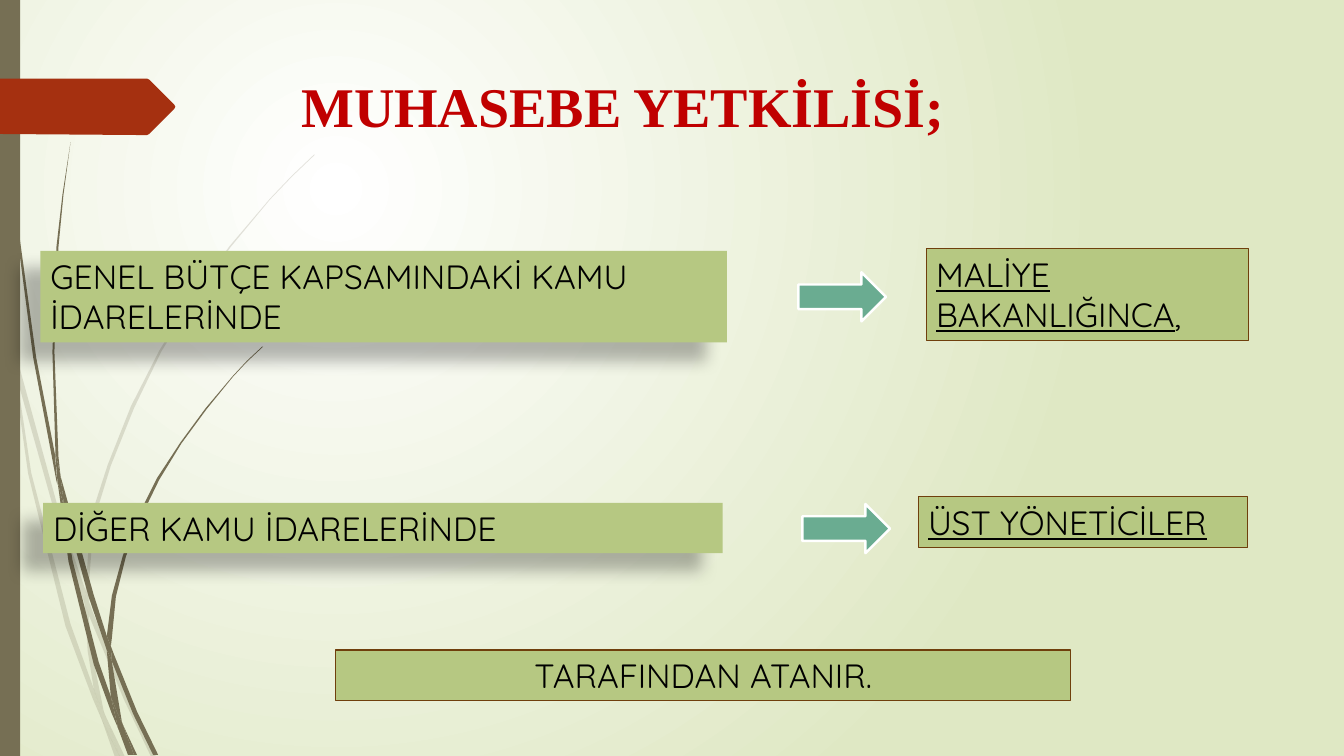
from lxml import etree
from pptx import Presentation
from pptx.dml.color import RGBColor
from pptx.enum.shapes import MSO_SHAPE as SHAPE
from pptx.enum.text import MSO_ANCHOR as ANCHOR, MSO_AUTO_SIZE as AUTO, PP_ALIGN as ALIGN
from pptx.oxml.ns import qn
from pptx.util import Cm, Pt

BROWN, RUST, GREEN, EDGE = "766F54", "A53010", "B6C882", "6F3F0C"
BODY_FONT = "Quicksand"
OUTLINE_UNIT = Cm(2.54) / 100  # outline points are in hundredths of an inch

# Pieces of the grass blades, each a closed outline
PALE_BLADES = [
    [(11, 350), (9, 322), (0, 282), (0, 299), (10, 344)],
    [(58, 522), (84, 599), (85, 586), (62, 520), (14, 345), (17, 376)],
    [(92, 607), (88, 596), (88, 610), (123, 694), (150, 751), (155, 751), (127, 692)],
    [(119, 751), (124, 751), (105, 711)],
    [(93, 683), (70, 619), (31, 469), (17, 376), (11, 350), (28, 470), (65, 621),
     (92, 693), (101, 714), (99, 707)],
    [(84, 599), (87, 646), (93, 683), (96, 692), (105, 711), (103, 706), (91, 646),
     (88, 610), (88, 608)],
    [(88, 584), (91, 543), (98, 501), (110, 462), (133, 405), (160, 349), (193, 295), (229, 245),
     (268, 198), (290, 175), (312, 154), (312, 153), (289, 175), (268, 197), (228, 244),
     (191, 294), (158, 348), (130, 403), (107, 461), (94, 501), (88, 542), (85, 584),
     (85, 586), (88, 596)],
    [(101, 714), (114, 751), (119, 751)],
    [(88, 608), (88, 610), (88, 596), (85, 586), (84, 599)],
    [(96, 692), (93, 683), (99, 707), (101, 714), (119, 751), (105, 711)],
]
DARK_BLADES = [
    [(7, 110), (17, 233), (33, 355), (56, 477), (57, 481), (55, 457), (55, 453), (36, 355),
     (19, 232), (8, 109), (5, 48), (4, 0), (3, 0), (4, 48)],
    [(88, 592), (106, 645), (106, 633), (106, 631), (93, 590), (60, 472), (64, 505)],
    [(113, 649), (110, 641), (111, 656), (132, 708), (152, 749), (157, 749), (136, 706)],
    [(110, 691), (98, 657), (72, 556), (64, 505), (57, 477), (68, 557), (93, 659),
     (111, 708), (117, 722), (116, 717)],
    [(60, 472), (58, 453), (54, 349), (58, 245), (63, 193), (70, 141), (62, 193),
     (56, 245), (52, 349), (55, 449)],
    [(133, 749), (136, 749), (122, 719)],
    [(57, 477), (64, 505), (60, 472), (55, 449), (55, 453)],
    [(111, 633), (115, 592), (125, 552), (140, 513), (158, 476), (180, 440), (205, 406), (231, 374),
     (245, 359), (261, 344), (260, 344), (245, 358), (231, 373), (204, 405), (179, 439),
     (156, 474), (137, 512), (122, 551), (111, 591), (106, 631), (110, 641)],
    [(117, 722), (127, 749), (131, 749)],
    [(106, 645), (110, 691), (116, 706), (122, 719), (121, 716), (111, 656), (109, 651)],
    [(106, 645), (109, 651), (111, 656), (110, 641), (106, 631), (106, 633)],
    [(116, 706), (110, 691), (116, 717), (117, 722), (130, 749), (133, 749), (122, 719)],
]
TITLE_TAG = [(173, 108), (148, 133), (146, 134), (136, 134), (0, 133), (0, 78),
             (146, 78), (148, 79), (173, 104), (174, 106)]


def color(hex_code):
    return RGBColor.from_string(hex_code)


def add_xml(parent, tag, **attrs):
    return etree.SubElement(parent, qn(tag), {k: str(v) for k, v in attrs.items()})


def paint(sp, fill, line=None, width=0.75):
    sp.shadow.inherit = False
    sp.fill.solid()
    sp.fill.fore_color.rgb = color(fill)
    if line:
        sp.line.color.rgb = color(line)
        sp.line.width = Pt(width)
    else:
        sp.line.fill.background()


def set_alpha(sp, percent):
    clr = sp._element.spPr.find(qn("a:solidFill")).find(qn("a:srgbClr"))
    add_xml(clr, "a:alpha", val=percent * 1000)


def cast_shadow(sp):
    effects = sp._element.spPr.find(qn("a:effectLst"))
    shadow = add_xml(effects, "a:outerShdw", blurRad=Pt(11.8), dist=Pt(19.7),
                     dir=141 * 60000, algn="tr", rotWithShape=0)
    add_xml(add_xml(shadow, "a:srgbClr", val="000000"), "a:alpha", val=28000)


def add_outline(shapes, points, fill):
    builder = shapes.build_freeform(*points[0], scale=OUTLINE_UNIT)
    builder.add_line_segments(points[1:], close=True)
    sp = builder.convert_to_shape()
    paint(sp, fill)
    return sp


def add_blades(slide, blades, alpha=None):
    group = slide.shapes.add_group_shape()
    for points in blades:
        sp = add_outline(group.shapes, points, BROWN)
        if alpha:
            set_alpha(sp, alpha)


def add_preset(slide, kind, at, fill, line=None, width=0.75):
    sp = slide.shapes.add_shape(kind, *map(Cm, at))
    paint(sp, fill, line, width)
    return sp


def format_run(r, size, font, hex_code):
    r.font.size = Pt(size)
    r.font.name = font
    r.font.color.rgb = color(hex_code)


def add_box(slide, at, text, line=None, align=ALIGN.LEFT, underlined=False, tail=""):
    sp = add_preset(slide, SHAPE.RECTANGLE, at, GREEN, line)
    tf = sp.text_frame
    tf.word_wrap = True
    tf.auto_size = AUTO.SHAPE_TO_FIT_TEXT
    tf.vertical_anchor = ANCHOR.TOP
    p = tf.paragraphs[0]
    p.text = text
    p.alignment = align
    p.runs[0].font.underline = underlined
    if tail:
        p.add_run().text = tail
    for r in p.runs:
        format_run(r, 24, BODY_FONT, "000000")
    return sp


def add_title(slide, at, text):
    tf = slide.shapes.add_textbox(*map(Cm, at)).text_frame
    tf.word_wrap = True
    p = tf.paragraphs[0]
    p.text = text
    p.alignment = ALIGN.CENTER
    r = p.runs[0]
    format_run(r, 40, "Times New Roman", "C00000")
    r.font.bold = True


def set_background(slide):
    fill = slide.background.fill
    fill.gradient()
    for stop, position, hex_code in zip(fill.gradient_stops, (0, 1), ("FFFFFF", "DFE8C4")):
        stop.position = position
        stop.color.rgb = color(hex_code)
    # Radial instead of linear
    grad = slide._element.find(".//" + qn("a:gradFill"))
    lin = grad.find(qn("a:lin"))
    radial = etree.Element(qn("a:path"), {"path": "circle"})
    add_xml(radial, "a:fillToRect", l=50000, t=50000, r=100000, b=100000)
    grad.replace(lin, radial)


def main():
    prs = Presentation()
    prs.slide_width, prs.slide_height = Cm(33.87), Cm(19.05)
    slide = prs.slides.add_slide(prs.slide_layouts[6])

    # Backdrop
    set_background(slide)
    add_blades(slide, PALE_BLADES, alpha=20)
    add_blades(slide, DARK_BLADES)
    add_preset(slide, SHAPE.RECTANGLE, (0, 0, 0.51, 19.05), BROWN)
    add_outline(slide.shapes, TITLE_TAG, RUST)

    add_title(slide, (1.09, 1.68, 29.21, 3.68), "MUHASEBE YETKİLİSİ;")

    # Administrations on the left, appointing authorities on the right
    cast_shadow(add_box(slide, (1.02, 6.32, 17.3, 2.31),
                        "GENEL BÜTÇE KAPSAMINDAKİ KAMU İDARELERİNDE"))
    add_box(slide, (23.34, 6.27, 8.13, 2.31), "MALİYE BAKANLIĞINCA", EDGE,
            underlined=True, tail=",")
    cast_shadow(add_box(slide, (1.09, 12.67, 17.12, 1.27), "DİĞER KAMU İDARELERİNDE"))
    add_box(slide, (23.14, 12.52, 8.31, 1.27), "ÜST YÖNETİCİLER", EDGE, underlined=True)

    # Arrows between them
    for left, top in ((20.12, 6.86), (20.22, 12.7)):
        add_preset(slide, SHAPE.RIGHT_ARROW, (left, top, 2.21, 1.24), "6AAC91", "FFFFFF", 1.75)

    # Conclusion
    add_box(slide, (8.46, 16.38, 18.52, 1.27), "TARAFINDAN ATANIR.", EDGE, ALIGN.CENTER)

    prs.save("out.pptx")


if __name__ == "__main__":
    main()
